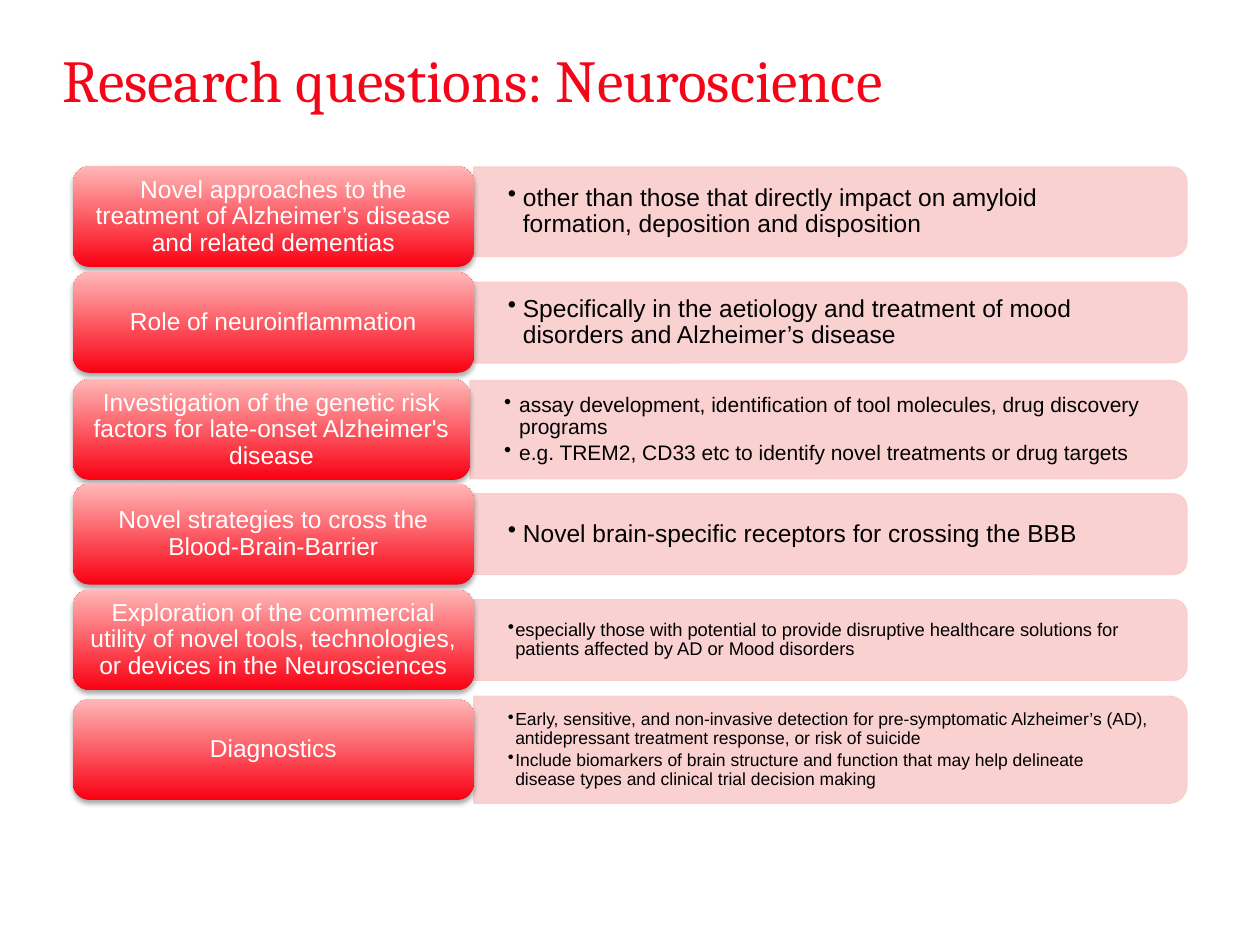
from lxml import etree
from pptx import Presentation
from pptx.dml.color import RGBColor
from pptx.enum import shapes, text
from pptx.oxml.ns import qn
from pptx.util import Inches, Pt

LABEL_LEFT = 0.58
LABEL_HEIGHT = 0.8
PANEL_RIGHT = 9.42

# label, label top, label width, panel centre, panel height, text size, hang, bullets
ROWS = [
    ("Novel approaches to the treatment of Alzheimer’s disease and related dementias",
     1.32, 3.18, 1.68, 0.71, 14, 0.12,
     ["other than those that directly impact on amyloid formation, "
      "deposition and disposition"]),
    ("Role of neuroinflammation",
     2.16, 3.18, 2.56, 0.64, 14, 0.12,
     ["Specifically in the aetiology and treatment of mood disorders "
      "and Alzheimer’s disease"]),
    ("Investigation of the genetic risk factors for late-onset Alzheimer's disease",
     3.01, 3.15, 3.41, 0.78, 12, 0.12,
     ["assay development, identification of tool molecules, drug discovery programs",
      "e.g. TREM2, CD33 etc to identify novel treatments or drug targets"]),
    ("Novel strategies to cross the Blood-Brain-Barrier",
     3.84, 3.18, 4.24, 0.64, 14, 0.12,
     ["Novel brain-specific receptors for crossing the BBB"]),
    ("Exploration of the commercial utility of novel tools, technologies, "
     "or devices in the Neurosciences",
     4.68, 3.18, 5.08, 0.64, 10.5, 0.06,
     ["especially those with potential to provide disruptive healthcare solutions "
      "for patients affected by AD or Mood disorders"]),
    ("Diagnostics",
     5.55, 3.18, 5.95, 0.85, 10, 0.06,
     ["Early, sensitive, and non-invasive detection for pre-symptomatic Alzheimer’s "
      "(AD), antidepressant treatment response, or risk of suicide",
      "Include biomarkers of brain structure and function that may help delineate "
      "disease types and clinical trial decision making"]),
]


def rgb(value):
    return RGBColor.from_string(value)


def set_frame(frame, horizontal, vertical, anchor):
    frame.word_wrap = True
    frame.margin_left = frame.margin_right = Inches(horizontal)
    frame.margin_top = frame.margin_bottom = Inches(vertical)
    frame.vertical_anchor = anchor


def set_font(paragraph, name, size, color):
    for run in paragraph.runs:
        run.font.name = name
        run.font.size = Pt(size)
        run.font.color.rgb = rgb(color)


def set_alpha(fill, percent):
    for color in fill._xPr.iter(qn("a:srgbClr")):
        etree.SubElement(color, qn("a:alpha"), val=str(percent * 1000))


def add_bullet(paragraph, hang):
    properties = paragraph._p.get_or_add_pPr()
    properties.set("marL", str(Inches(hang)))
    properties.set("indent", str(-Inches(hang)))
    etree.SubElement(properties, qn("a:buChar"), char="•")


def add_shadow(shape):
    shape.shadow.inherit = False
    effects = shape._element.spPr.find(qn("a:effectLst"))
    shadow = etree.SubElement(
        effects, qn("a:outerShdw"), blurRad=str(Pt(3.1)), dist=str(Pt(1.8)),
        dir="5400000", rotWithShape="0")
    color = etree.SubElement(shadow, qn("a:srgbClr"), val="000000")
    etree.SubElement(color, qn("a:alpha"), val="35000")


def add_title(slide, wording):
    box = slide.shapes.add_textbox(Inches(0.5), Inches(0.34), Inches(9), Inches(1.09))
    set_frame(box.text_frame, 0, 0, text.MSO_ANCHOR.TOP)
    box.text_frame.text = wording
    set_font(box.text_frame.paragraphs[0], "Cambria", 34, "F30617")


def add_panel(slide, left, center, height):
    # The rounded top corners face right after a quarter turn
    length = PANEL_RIGHT - left
    middle = left + length / 2
    panel = slide.shapes.add_shape(
        shapes.MSO_SHAPE.ROUND_2_SAME_RECTANGLE,
        Inches(middle - height / 2), Inches(center - length / 2),
        Inches(height), Inches(length))
    panel.rotation = 90
    panel.shadow.inherit = False
    panel.line.width = Pt(0.75)
    for fill in (panel.fill, panel.line.fill):
        fill.solid()
        fill.fore_color.rgb = rgb("FACCCC")
    set_alpha(panel.fill, 90)


def add_bullets(slide, left, center, height, size, hang, bullets):
    box = slide.shapes.add_textbox(
        Inches(left), Inches(center - height / 2),
        Inches(PANEL_RIGHT - 0.04 - left), Inches(height))
    frame = box.text_frame
    set_frame(frame, 0.27, 0.14, text.MSO_ANCHOR.MIDDLE)
    frame.text = "\n".join(bullets)
    for paragraph in frame.paragraphs:
        paragraph.level = 1
        paragraph.line_spacing = 0.9
        paragraph.space_after = Pt(0.15 * size)
        add_bullet(paragraph, hang)
        set_font(paragraph, "Arial", size, "000000")


def add_label(slide, wording, top, width):
    label = slide.shapes.add_shape(
        shapes.MSO_SHAPE.ROUNDED_RECTANGLE, Inches(LABEL_LEFT), Inches(top),
        Inches(width), Inches(LABEL_HEIGHT))
    label.fill.gradient()
    label.fill.gradient_angle = 90
    for stop, color, position in zip(
            label.fill.gradient_stops, ("F90012", "FFB7B7"), (0, 1)):
        stop.color.rgb = rgb(color)
        stop.position = position
    label.line.fill.background()
    add_shadow(label)
    set_frame(label.text_frame, 0.06, 0.03, text.MSO_ANCHOR.MIDDLE)
    label.text_frame.text = wording
    paragraph = label.text_frame.paragraphs[0]
    paragraph.alignment = text.PP_ALIGN.CENTER
    paragraph.line_spacing = 0.9
    set_font(paragraph, "Arial", 14, "FFFFFF")


def main():
    presentation = Presentation()
    presentation.slide_width = Inches(10)
    presentation.slide_height = Inches(7.5)
    slide = presentation.slides.add_slide(presentation.slide_layouts[6])

    add_title(slide, "Research questions: Neuroscience")

    # Each row: panel with bullets on the right, label on the left
    for label, top, width, center, height, size, hang, bullets in ROWS:
        left = LABEL_LEFT + width
        add_panel(slide, left, center, height)
        add_bullets(slide, left, center, height - 0.07, size, hang, bullets)
        add_label(slide, label, top, width)

    presentation.save("out.pptx")


if __name__ == "__main__":
    main()
